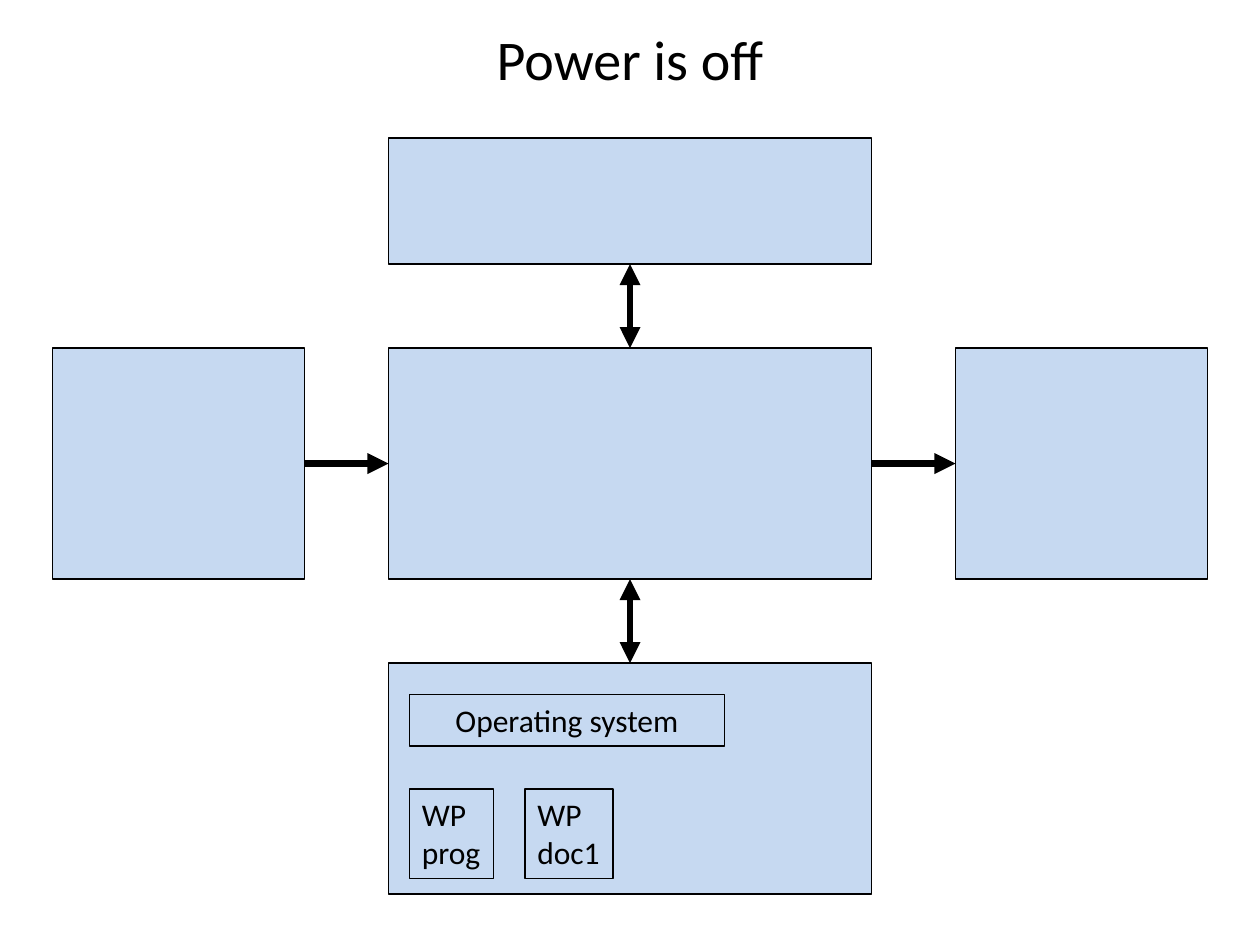
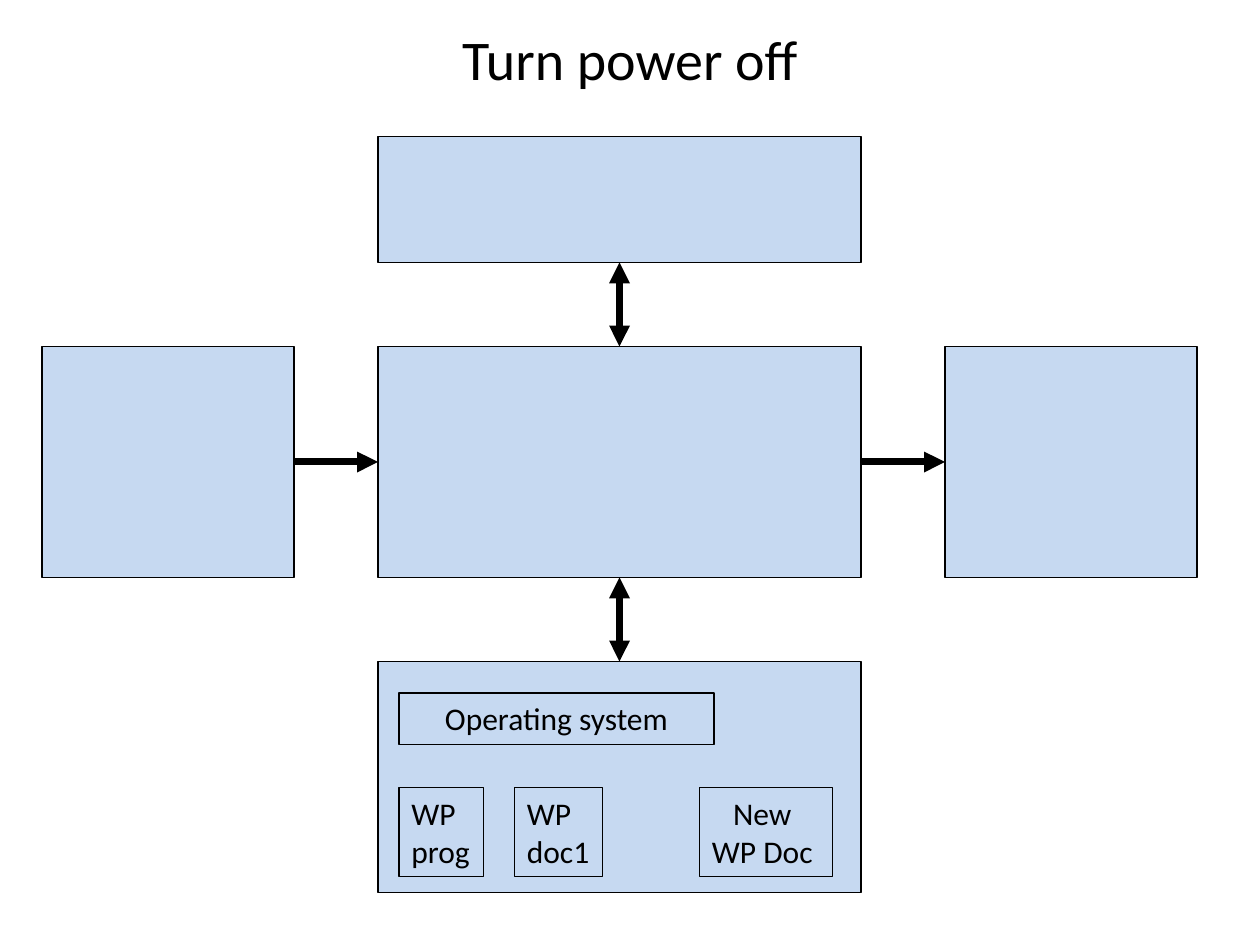
from dataclasses import dataclass

from lxml import etree
from pptx import Presentation
from pptx.dml.color import RGBColor
from pptx.enum.shapes import MSO_CONNECTOR, MSO_SHAPE
from pptx.enum.text import MSO_ANCHOR, MSO_AUTO_SIZE, PP_ALIGN
from pptx.oxml.ns import qn
from pptx.util import Inches, Pt

RECT, STRAIGHT = MSO_SHAPE.RECTANGLE, MSO_CONNECTOR.STRAIGHT
LEFT, CENTER = PP_ALIGN.LEFT, PP_ALIGN.CENTER
TOP, MIDDLE = MSO_ANCHOR.TOP, MSO_ANCHOR.MIDDLE
FIT = MSO_AUTO_SIZE.SHAPE_TO_FIT_TEXT
NORTH, WEST, SOUTH, EAST = range(4)  # connection sites of a rectangle


@dataclass(frozen=True)
class Theme:
    font: str = "Calibri"
    ink: RGBColor = RGBColor(0x00, 0x00, 0x00)
    panel: RGBColor = RGBColor(0xC6, 0xD9, 0xF1)
    title_size: int = 32
    label_size: int = 18
    border: float = 0.75
    arrow: float = 4


def write(tf, text, theme, size, align=LEFT, anchor=TOP, wrap=True):
    """Fill a text frame, one paragraph for each line of text."""
    tf.word_wrap = wrap
    tf.vertical_anchor = anchor
    for i, line in enumerate(text.split("\n")):
        p = tf.paragraphs[0] if i == 0 else tf.add_paragraph()
        p.alignment = align
        r = p.add_run()
        r.text = line
        r.font.name, r.font.size = theme.font, Pt(size)
        r.font.color.rgb = theme.ink


class Deck:
    """Draws on a grid of 120 columns and 90 rows, from a movable origin."""

    COLS, ROWS = 120, 90

    def __init__(self, theme):
        self.theme = theme
        self.prs = Presentation()
        self.prs.slide_width, self.prs.slide_height = Inches(10), Inches(7.5)

    def place(self, col, row, cols, rows):
        dx, dy = self.origin
        x, y = self.prs.slide_width / self.COLS, self.prs.slide_height / self.ROWS
        return [round(v) for v in ((col + dx) * x, (row + dy) * y, cols * x, rows * y)]

    def new_slide(self, title, origin):
        self.s = self.prs.slides.add_slide(self.prs.slide_layouts[6])
        self.origin = (0, 0)
        sp = self.s.shapes.add_textbox(*self.place(6, -2, 108, 15))
        write(sp.text_frame, title, self.theme, self.theme.title_size,
              align=CENTER, anchor=MIDDLE)
        self.origin = origin

    def box(self, *cell):
        sp = self.s.shapes.add_shape(RECT, *self.place(*cell))
        sp.shadow.inherit = False
        sp.fill.background()
        sp.line.color.rgb = self.theme.ink
        sp.line.width = Pt(self.theme.border)
        return sp

    def panel(self, *cell):
        sp = self.box(*cell)
        sp.fill.solid()
        sp.fill.fore_color.rgb = self.theme.panel
        return sp

    def label(self, text, *cell, align=LEFT, wrap=True):
        tf = self.box(*cell).text_frame
        write(tf, text, self.theme, self.theme.label_size, align=align, wrap=wrap)
        tf.auto_size = FIT

    def arrow(self, start, start_site, end, end_site, both=False):
        c = self.s.shapes.add_connector(STRAIGHT, 0, 0, 0, 0)
        c.begin_connect(start, start_site)
        c.end_connect(end, end_site)
        c.line.color.rgb = self.theme.ink
        c.line.width = Pt(self.theme.arrow)
        ln = c.line._get_or_add_ln()
        for tag in ("a:headEnd", "a:tailEnd") if both else ("a:tailEnd",):
            etree.SubElement(ln, qn(tag), type="triangle")
        etree.SubElement(c._element.spPr, qn("a:effectLst"))


def computer(deck):
    """Five empty parts of a computer, joined by arrows, with the stored files."""
    side, wide, gap = 24, 46, 8
    low, tall = 12, 22
    mid_col, right_col = side + gap, side + wide + 2 * gap
    mid_row, bottom_row = low + gap, low + tall + 2 * gap

    # Panels
    top = deck.panel(mid_col, 0, wide, low)
    middle = deck.panel(mid_col, mid_row, wide, tall)
    bottom = deck.panel(mid_col, bottom_row, wide, tall)
    left = deck.panel(0, mid_row, side, tall)
    right = deck.panel(right_col, mid_row, side, tall)

    # Flow between panels
    deck.arrow(top, SOUTH, middle, NORTH, both=True)
    deck.arrow(middle, SOUTH, bottom, NORTH, both=True)
    deck.arrow(left, EAST, middle, WEST)
    deck.arrow(middle, EAST, right, WEST)

    # Contents of the bottom panel
    deck.label("Operating system", 34, 53, 30, 4.9, align=CENTER)
    deck.label("WP\nprog", 34, 62, 8.04, 8.5, wrap=False)
    deck.label("WP\ndoc1", 45, 62, 8.4, 8.5, wrap=False)


def main():
    deck = Deck(Theme())

    # Slide 1
    deck.new_slide("Power is off", origin=(5, 13.15))
    computer(deck)

    # Slide 2: a new document has been stored
    deck.new_slide("Turn power off", origin=(4, 13))
    computer(deck)
    deck.label("New \nWP Doc ", 62.6, 62, 12.7, 8.5, align=CENTER)

    deck.prs.save("out.pptx")


if __name__ == "__main__":
    main()
